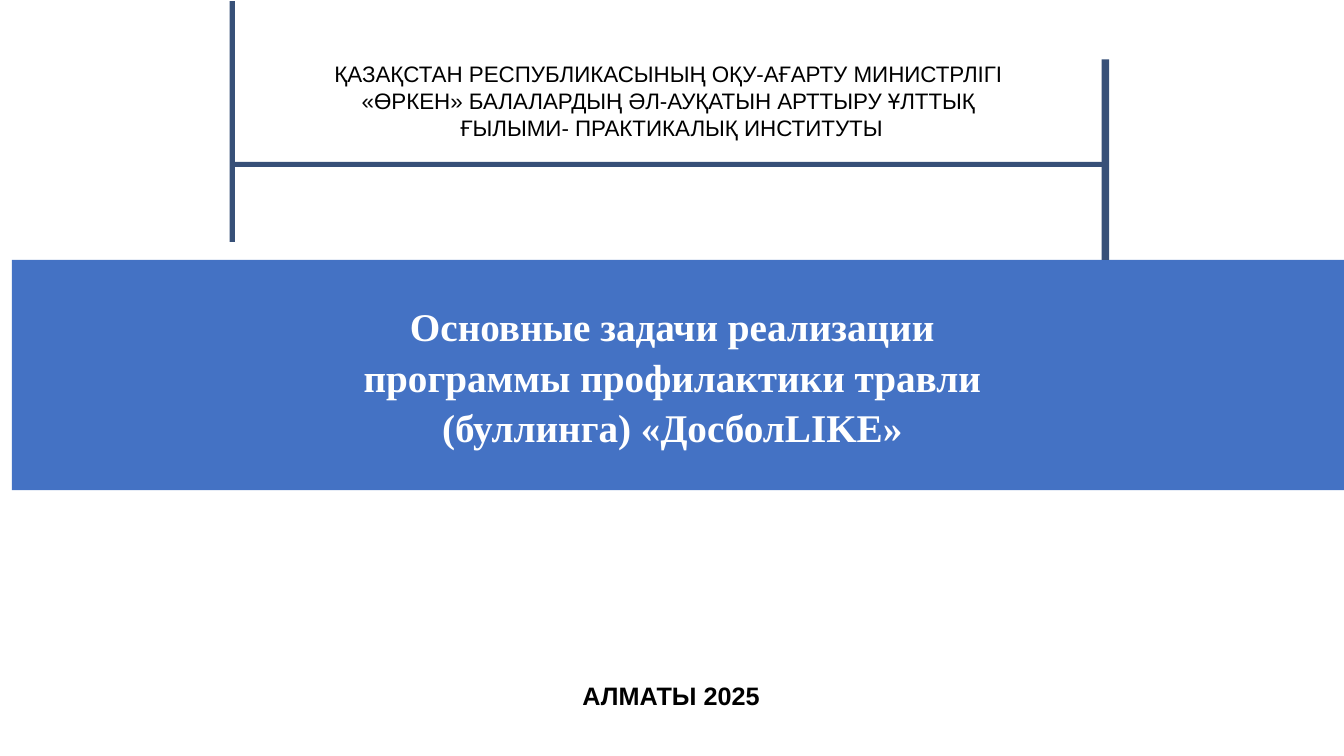
from pptx import Presentation
from pptx.dml.color import RGBColor
from pptx.enum.shapes import MSO_SHAPE
from pptx.enum.text import MSO_AUTO_SIZE, PP_ALIGN
from pptx.util import Cm, Pt

RECTANGLE = MSO_SHAPE.RECTANGLE
FIT_SHAPE = MSO_AUTO_SIZE.SHAPE_TO_FIT_TEXT
CENTER, LEFT = PP_ALIGN.CENTER, PP_ALIGN.LEFT
NAVY, BLUE, WHITE, BLACK = "375078", "4472C4", "FFFFFF", "000000"

INSTITUTE = (
    "ҚАЗАҚСТАН РЕСПУБЛИКАСЫНЫҢ ОҚУ-АҒАРТУ МИНИСТРЛІГІ \n"
    "«ӨРКЕН» БАЛАЛАРДЫҢ ӘЛ-АУҚАТЫН АРТТЫРУ ҰЛТТЫҚ \n"
    "ҒЫЛЫМИ- ПРАКТИКАЛЫҚ ИНСТИТУТЫ"
)
TITLE = "Основные задачи реализации программы профилактики травли (буллинга) «ДосболLIKE»"
PLACE_AND_YEAR = "АЛМАТЫ 2025"


def color(value):
    """Turn a hex string into a colour."""
    return RGBColor.from_string(value)


def add_bar(slide, left, top, width, height, fill):
    """Add a plain filled rectangle, measured in centimetres."""
    shape = slide.shapes.add_shape(RECTANGLE, Cm(left), Cm(top), Cm(width), Cm(height))
    shape.shadow.inherit = False
    shape.fill.solid()
    shape.fill.fore_color.rgb = color(fill)
    shape.line.fill.background()


def add_text(slide, left, top, width, height, text, size, font="Arial",
             fill=BLACK, bold=False, align=CENTER, wrap=False, spacing=None):
    """Add a text box with one format throughout, measured in centimetres."""
    box = slide.shapes.add_textbox(Cm(left), Cm(top), Cm(width), Cm(height))
    text_frame = box.text_frame
    text_frame.word_wrap = wrap
    text_frame.auto_size = FIT_SHAPE
    text_frame.text = text
    for paragraph in text_frame.paragraphs:
        paragraph.alignment = align
        paragraph.line_spacing = spacing
        for run in paragraph.runs:
            run.font.name = font
            run.font.size = Pt(size)
            run.font.bold = bold
            run.font.color.rgb = color(fill)


def main():
    """Build the title slide and save it."""
    presentation = Presentation()
    presentation.slide_width = Cm(33.87)
    presentation.slide_height = Cm(19.05)
    slide = presentation.slides.add_slide(presentation.slide_layouts[6])

    add_text(slide, 8.08, 1.4, 17.7, 2.31, INSTITUTE, 16)
    add_bar(slide, 5.79, 0.03, 0.13, 6.07, NAVY)
    add_bar(slide, 0.3, 6.55, 33.87, 5.8, BLUE)
    add_text(slide, 7.54, 7.42, 18.8, 4.09, TITLE, 28, font="Times New Roman",
             fill=WHITE, bold=True, wrap=True, spacing=1.07)
    add_text(slide, 14.43, 17.02, 5.03, 1.02, PLACE_AND_YEAR, 18, bold=True, align=LEFT)
    add_bar(slide, 27.76, 1.5, 0.19, 5.05, NAVY)
    add_bar(slide, 5.92, 4.08, 21.86, 0.13, NAVY)

    presentation.save("out.pptx")


if __name__ == "__main__":
    main()
